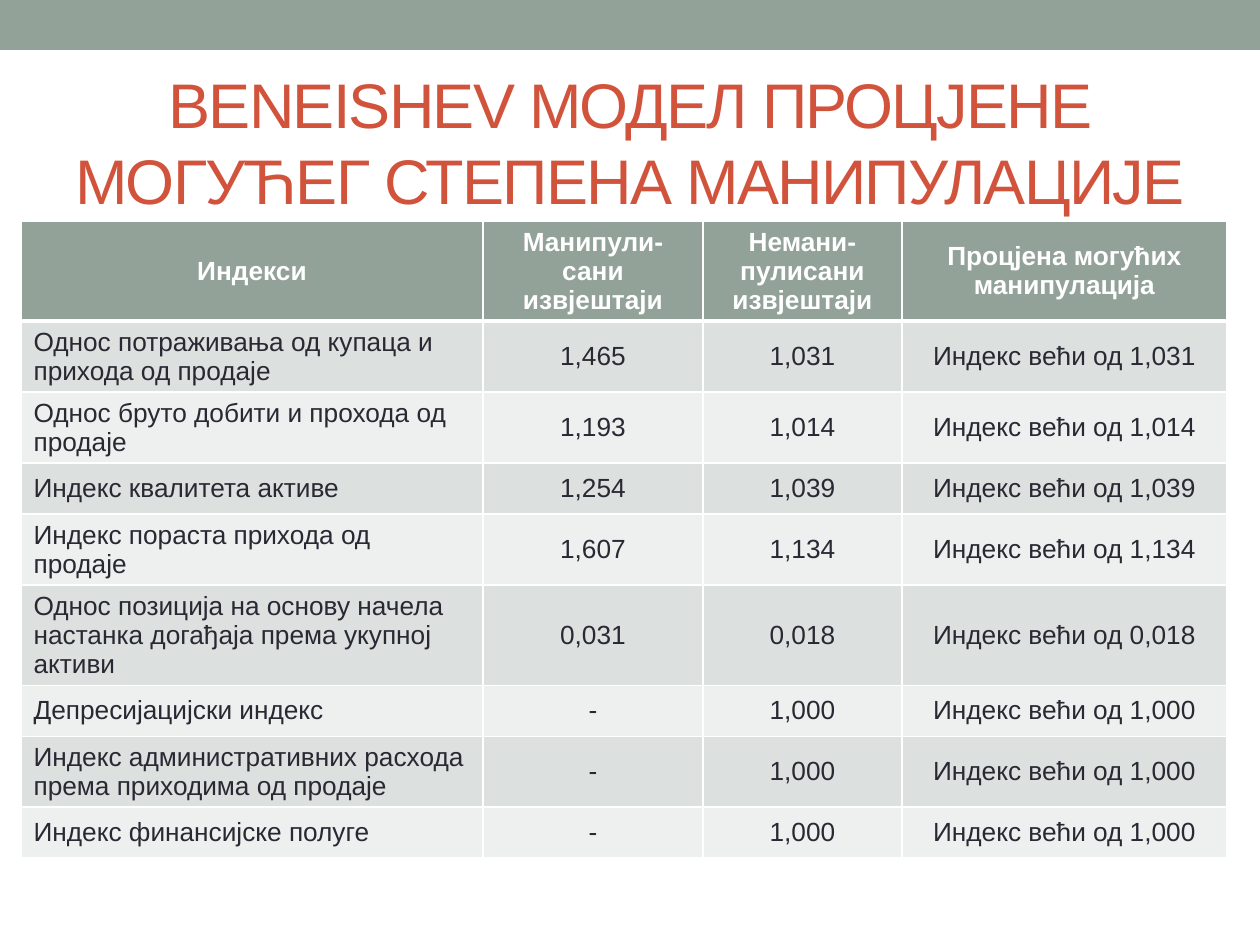
from lxml.etree import SubElement
from pptx import Presentation
from pptx.dml.color import RGBColor
from pptx.enum.shapes import MSO_SHAPE
from pptx.enum.text import MSO_ANCHOR, MSO_AUTO_SIZE, PP_ALIGN
from pptx.oxml.ns import qn
from pptx.util import Emu, Pt

TITLE = "BENEISHEV МОДЕЛ ПРОЦЈЕНЕ МОГУЋЕГ СТЕПЕНА МАНИПУЛАЦИЈЕ"
HEADERS = ["Индекси", "Манипули-сани извјештаји", "Немани-пулисани извјештаји",
           "Процјена могућих манипулација"]
INDICES = [
    ("Однос потраживања од купаца и прихода од продаје", "1,465", "1,031"),
    ("Однос бруто добити и прохода од продаје", "1,193", "1,014"),
    ("Индекс квалитета активе", "1,254", "1,039"),
    ("Индекс пораста прихода од продаје", "1,607", "1,134"),
    ("Однос позиција на основу начела настанка догађаја према укупној активи",
     "0,031", "0,018"),
    ("Депресијацијски индекс", "-", "1,000"),
    ("Индекс административних расхода према приходима од продаје", "-", "1,000"),
    ("Индекс финансијске полуге", "-", "1,000"),
]
COLUMN_WIDTHS = [462, 220, 199, 325]
ROW_HEIGHT = 51
COLORS = {"sage": "93A299", "title": "D2533C", "text": "292934", "white": "FFFFFF",
          "odd": "DCE0DE", "even": "EEF0EF"}
FONT = "Arial"


def px(value):
    return Emu(round(value * 914400 / 126))


def color(name):
    return RGBColor.from_string(COLORS[name])


def style(paragraph, size, color_name, alignment, bold=False):
    paragraph.alignment = alignment
    paragraph.font.name = FONT
    paragraph.font.size = Pt(size)
    paragraph.font.bold = bold
    paragraph.font.color.rgb = color(color_name)


def add_borders(cell, bottom_width):
    properties = cell._tc.get_or_add_tcPr()
    widths = {"a:lnL": 1, "a:lnR": 1, "a:lnT": 1, "a:lnB": bottom_width}
    for position, (tag, width) in enumerate(widths.items()):
        line = SubElement(properties, qn(tag), w=str(Pt(width)))
        fill = SubElement(line, qn("a:solidFill"))
        SubElement(fill, qn("a:srgbClr"), val=COLORS["white"])
        properties.insert(position, line)


def add_title(slide):
    title = slide.shapes.title
    title.left, title.top, title.width, title.height = map(px, (63, 73, 1134, 136))
    frame = title.text_frame
    frame.text = TITLE
    frame.word_wrap = True
    frame.auto_size = MSO_AUTO_SIZE.NONE
    frame.vertical_anchor = MSO_ANCHOR.MIDDLE
    frame.margin_left = frame.margin_right = 0
    paragraph = frame.paragraphs[0]
    style(paragraph, 36, "title", PP_ALIGN.CENTER)
    paragraph.runs[0].font._element.set("spc", "-100")


def add_index_table(slide):
    rows = [HEADERS] + [(*index, f"Индекс већи од {index[-1]}") for index in INDICES]
    table = slide.shapes.add_table(
        len(rows), len(HEADERS), px(21), px(221),
        px(sum(COLUMN_WIDTHS)), px(ROW_HEIGHT * len(rows))).table
    for column, width in zip(table.columns, COLUMN_WIDTHS):
        column.width = px(width)
    for row_number, values in enumerate(rows):
        is_header = row_number == 0
        fill = "sage" if is_header else ("even", "odd")[row_number % 2]
        for column_number, value in enumerate(values):
            cell = table.cell(row_number, column_number)
            cell.text = value
            cell.vertical_anchor = MSO_ANCHOR.MIDDLE
            cell.fill.solid()
            cell.fill.fore_color.rgb = color(fill)
            centered = is_header or column_number > 0
            style(cell.text_frame.paragraphs[0], 15, "white" if is_header else "text",
                  PP_ALIGN.CENTER if centered else PP_ALIGN.LEFT, is_header)
            add_borders(cell, 3 if is_header else 1)


def main():
    presentation = Presentation()
    presentation.slide_width, presentation.slide_height = px(1260), px(945)
    slide = presentation.slides.add_slide(presentation.slide_layouts[5])
    band = slide.shapes.add_shape(MSO_SHAPE.RECTANGLE, 0, 0, px(1260), px(50))
    band.shadow.inherit = False
    band.fill.solid()
    band.fill.fore_color.rgb = color("sage")
    band.line.fill.background()
    add_title(slide)
    add_index_table(slide)
    presentation.save("out.pptx")


if __name__ == "__main__":
    main()
